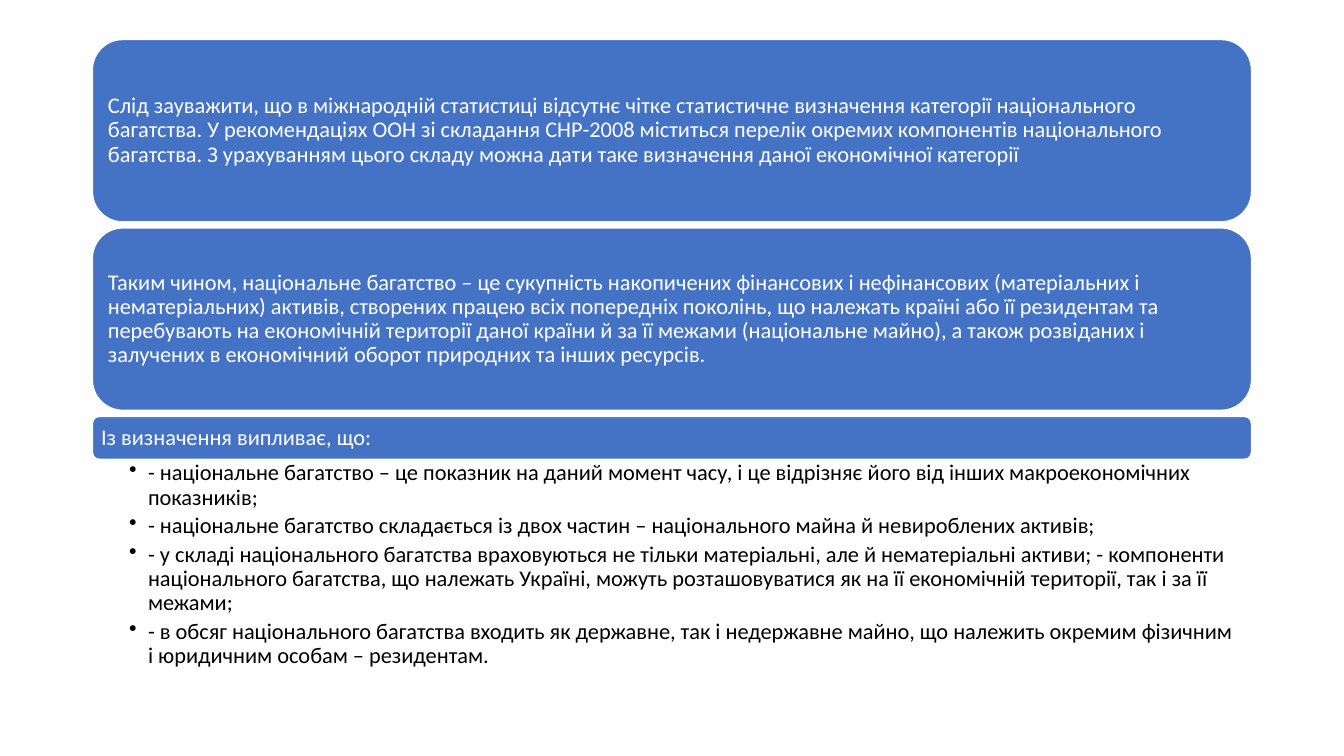
from lxml import etree
from pptx import Presentation
from pptx.dml.color import RGBColor
from pptx.enum.shapes import MSO_SHAPE
from pptx.enum.text import MSO_ANCHOR, PP_ALIGN
from pptx.oxml.ns import qn
from pptx.util import Pt

ROUND = MSO_SHAPE.ROUNDED_RECTANGLE
MIDDLE, TOP = MSO_ANCHOR.MIDDLE, MSO_ANCHOR.TOP
LEFT = PP_ALIGN.LEFT

BLUE, WHITE, BLACK = "4472C4", "FFFFFF", "000000"
FONT, SIZE = "Calibri", 16

CARDS = [
    (130.3, "Слід зауважити, що в міжнародній статистиці відсутнє чітке статистичне визначення категорії національного багатства. У рекомендаціях ООН зі складання СНР-2008 міститься перелік окремих компонентів національного багатства. З урахуванням цього складу можна дати таке визначення даної економічної категорії"),
    (130.3, "Таким чином, національне багатство – це сукупність накопичених фінансових і нефінансових (матеріальних і нематеріальних) активів, створених працею всіх попередніх поколінь, що належать країні або її резидентам та перебувають на економічній території даної країни й за її межами (національне майно), а також розвіданих і залучених в економічний оборот природних та інших ресурсів."),
    (30.7, "Із визначення випливає, що:"),
]
POINTS = [
    "- національне багатство – це показник на даний момент часу, і це відрізняє його від інших макроекономічних показників;",
    "- національне багатство складається із двох частин – національного майна й невироблених активів;",
    "- у складі національного багатства враховуються не тільки матеріальні, але й нематеріальні активи; - компоненти національного багатства, що належать Україні, можуть розташовуватися як на її економічній території, так і за її межами;",
    "- в обсяг національного багатства входить як державне, так і недержавне майно, що належить окремим фізичним і юридичним особам – резидентам.",
]

EDGE, WIDTH, START, GAP = 66, 828, 28.2, 4.3
LIST_H, INDENT = 157.7, 13.5


def color(code):
    return RGBColor.from_string(code)


def set_frame(frame, pads, anchor):
    frame.word_wrap = True
    frame.vertical_anchor = anchor
    frame.margin_left, frame.margin_top, frame.margin_right, frame.margin_bottom = map(Pt, pads)


def set_text(para, text, ink, after):
    para.text = text
    para.alignment = LEFT
    para.line_spacing = 0.9
    para.space_after = Pt(after)
    for run in para.runs:
        run.font.name = FONT
        run.font.size = Pt(SIZE)
        run.font.color.rgb = color(ink)


def add_bullet(para):
    props = para._p.get_or_add_pPr()
    props.set("marL", str(Pt(INDENT)))
    props.set("indent", str(-Pt(INDENT)))
    etree.SubElement(props, qn("a:buChar")).set("char", "•")


def add_card(slide, top, height, text):
    card = slide.shapes.add_shape(ROUND, Pt(EDGE), Pt(top), Pt(WIDTH), Pt(height))
    card.shadow.inherit = False
    card.fill.solid()
    card.fill.fore_color.rgb = color(BLUE)
    card.line.color.rgb = color(WHITE)
    card.line.width = Pt(1)
    set_frame(card.text_frame, (4.8, 4.8, 4.8, 4.8), MIDDLE)
    set_text(card.text_frame.paragraphs[0], text, WHITE, 0)


def add_list(slide, top):
    box = slide.shapes.add_textbox(Pt(EDGE), Pt(top), Pt(WIDTH), Pt(LIST_H))
    frame = box.text_frame
    set_frame(frame, (26.3, 1.6, 8.6, 1.6), TOP)
    for i, text in enumerate(POINTS):
        para = frame.add_paragraph() if i else frame.paragraphs[0]
        para.level = 1
        add_bullet(para)
        set_text(para, text, BLACK, 3.2)


def main():
    deck = Presentation()
    deck.slide_width, deck.slide_height = Pt(960), Pt(540)
    slide = deck.slides.add_slide(deck.slide_layouts[6])
    top = START
    for height, text in CARDS:
        add_card(slide, top, height, text)
        top += height + GAP
    add_list(slide, top - GAP)
    deck.save("out.pptx")


if __name__ == "__main__":
    main()
